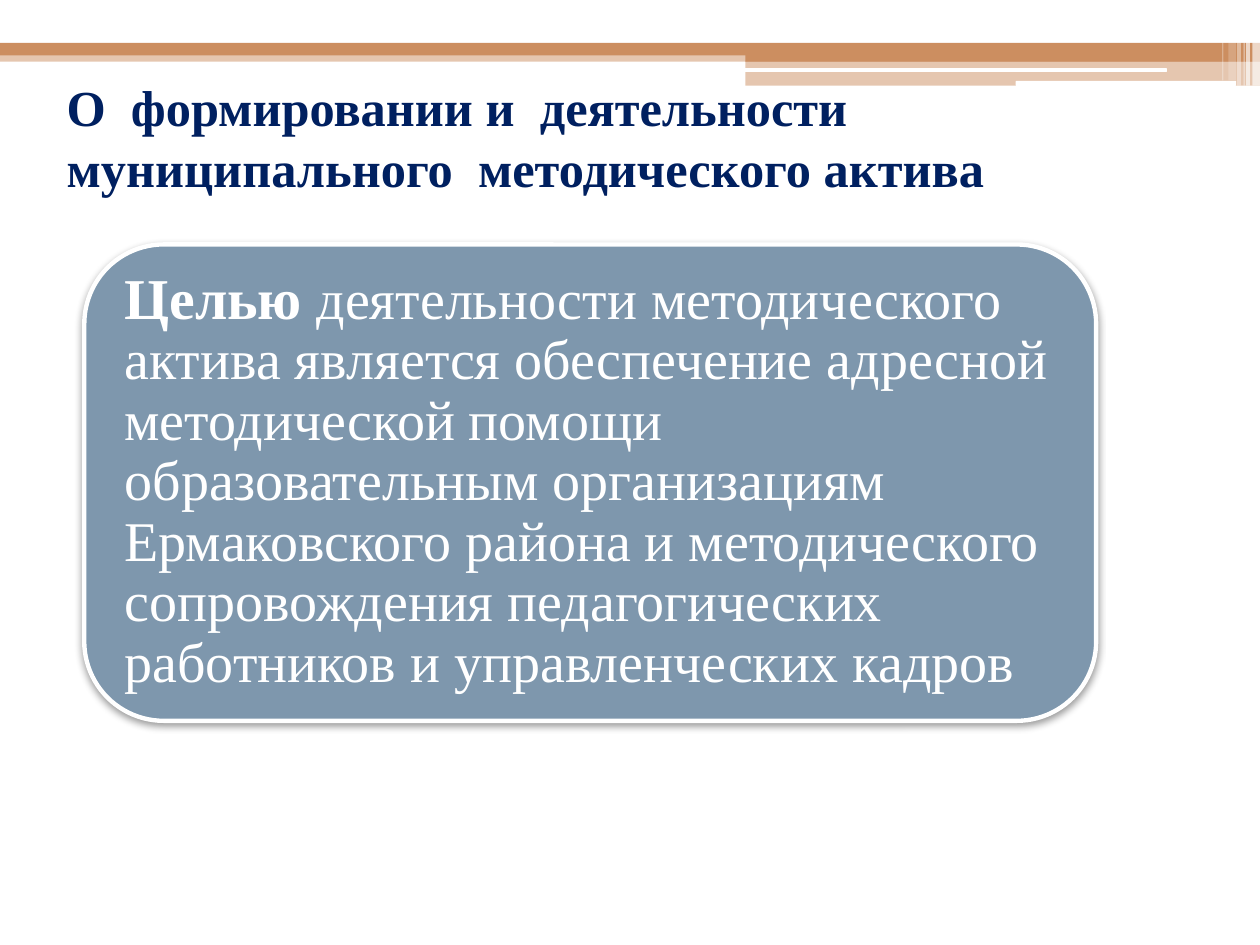
from lxml import etree
from pptx import Presentation
from pptx.dml.color import RGBColor
from pptx.enum.shapes import MSO_SHAPE
from pptx.enum.text import MSO_ANCHOR, PP_ALIGN
from pptx.oxml.ns import qn
from pptx.util import Pt

RECTANGLE = MSO_SHAPE.RECTANGLE
ROUNDED = MSO_SHAPE.ROUNDED_RECTANGLE
MIDDLE = MSO_ANCHOR.MIDDLE
LEFT = PP_ALIGN.LEFT

FONT = "Times New Roman"
COPPER, WHITE, NAVY, SLATE = "CC8E60", "FFFFFF", "002060", "7E97AD"

# Header bands: kind, left, top, width, height, colour, opacity in percent
BANDS = [
    (RECTANGLE, 0, 28.8, 720, 6.5, COPPER, 50),
    (RECTANGLE, 0, 0, 720, 24.5, WHITE, 100),
    (RECTANGLE, 0, 24.5, 720, 7.2, COPPER, 100),
    (RECTANGLE, 426, 28, 294, 7.2, COPPER, 100),
    (RECTANGLE, 426, 34.6, 294, 14.4, COPPER, 50),
    (ROUNDED, 425.6, 39, 241.2, 2.16, WHITE, 100),
    (ROUNDED, 580.4, 46.2, 126, 2.9, WHITE, 100),
]
# Fading stripes at the right edge: left, width, height, opacity
STRIPES = [
    (715.7, 4.3, 49, 65),
    (712.1, 2.16, 49, 65),
    (710.6, 0.72, 49, 60),
    (707, 2.16, 49, 40),
    (702, 4.3, 46, 20),
    (698.4, 0.72, 46, 30),
]

TITLE = "О  формировании и  деятельности муниципального  методического актива"
GOAL_WORD = "Целью "
GOAL_TEXT = (
    "деятельности методического актива является обеспечение адресной "
    "методической помощи образовательным организациям Ермаковского района "
    "и методического сопровождения педагогических работников и "
    "управленческих кадров"
)


def color(value):
    return RGBColor.from_string(value)


def set_values(target, values):
    for name, value in values.items():
        setattr(target, name, value)


def set_opacity(element, percent):
    alpha = etree.SubElement(element, qn("a:alpha"))
    alpha.set("val", str(percent * 1000))


def add_block(slide, kind, left, top, width, height, fill, opacity=100):
    shape = slide.shapes.add_shape(kind, Pt(left), Pt(top), Pt(width), Pt(height))
    shape.shadow.inherit = False
    shape.fill.solid()
    shape.fill.fore_color.rgb = color(fill)
    shape.line.fill.background()
    if opacity < 100:
        set_opacity(shape._element.spPr.find(".//" + qn("a:srgbClr")), opacity)
    return shape


def add_drop_shadow(shape, blur, distance, opacity):
    effects = shape._element.spPr.find(qn("a:effectLst"))
    shadow = etree.SubElement(effects, qn("a:outerShdw"), {
        "blurRad": str(Pt(blur)), "dist": str(Pt(distance)),
        "dir": "5400000", "rotWithShape": "0"})
    black = etree.SubElement(shadow, qn("a:srgbClr"), val="000000")
    set_opacity(black, opacity)


def add_text(slide, left, top, width, height, runs, frame_format, line_spacing=1.0):
    box = slide.shapes.add_textbox(Pt(left), Pt(top), Pt(width), Pt(height))
    frame = box.text_frame
    set_values(frame, {"word_wrap": True, "vertical_anchor": MIDDLE, **frame_format})
    paragraph = frame.paragraphs[0]
    set_values(paragraph, {"alignment": LEFT, "line_spacing": line_spacing})
    for text, size, bold, text_color in runs:
        run = paragraph.add_run()
        run.text = text
        set_values(run.font, {"name": FONT, "size": Pt(size), "bold": bold})
        run.font.color.rgb = color(text_color)


def add_header(slide):
    for band in BANDS:
        add_block(slide, *band)
    for left, width, height, opacity in STRIPES:
        add_block(slide, RECTANGLE, left, 0, width, height, WHITE, opacity)


def add_goal_card(slide):
    card = add_block(slide, ROUNDED, 48.2, 139.7, 578.2, 272.2, SLATE)
    card.line.color.rgb = color(WHITE)
    card.line.width = Pt(2.5)
    add_drop_shadow(card, 4.1, 2, 40)
    sides = ("left", "top", "right", "bottom")
    insets = {f"margin_{side}": Pt(10) for side in sides}
    runs = [(GOAL_WORD, 33, True, WHITE), (GOAL_TEXT, 32, False, WHITE)]
    add_text(slide, 61.2, 152.6, 551.5, 245.5, runs, insets, 0.9)


def main():
    presentation = Presentation()
    presentation.slide_width, presentation.slide_height = Pt(720), Pt(540)
    slide = presentation.slides.add_slide(presentation.slide_layouts[6])

    add_header(slide)
    # The deep bottom margin lifts the title towards the header
    add_text(slide, 31, 54.7, 674.6, 79.2, [(TITLE, 28.8, True, NAVY)],
             {"margin_bottom": Pt(36)})
    add_goal_card(slide)

    presentation.save("out.pptx")


if __name__ == "__main__":
    main()
